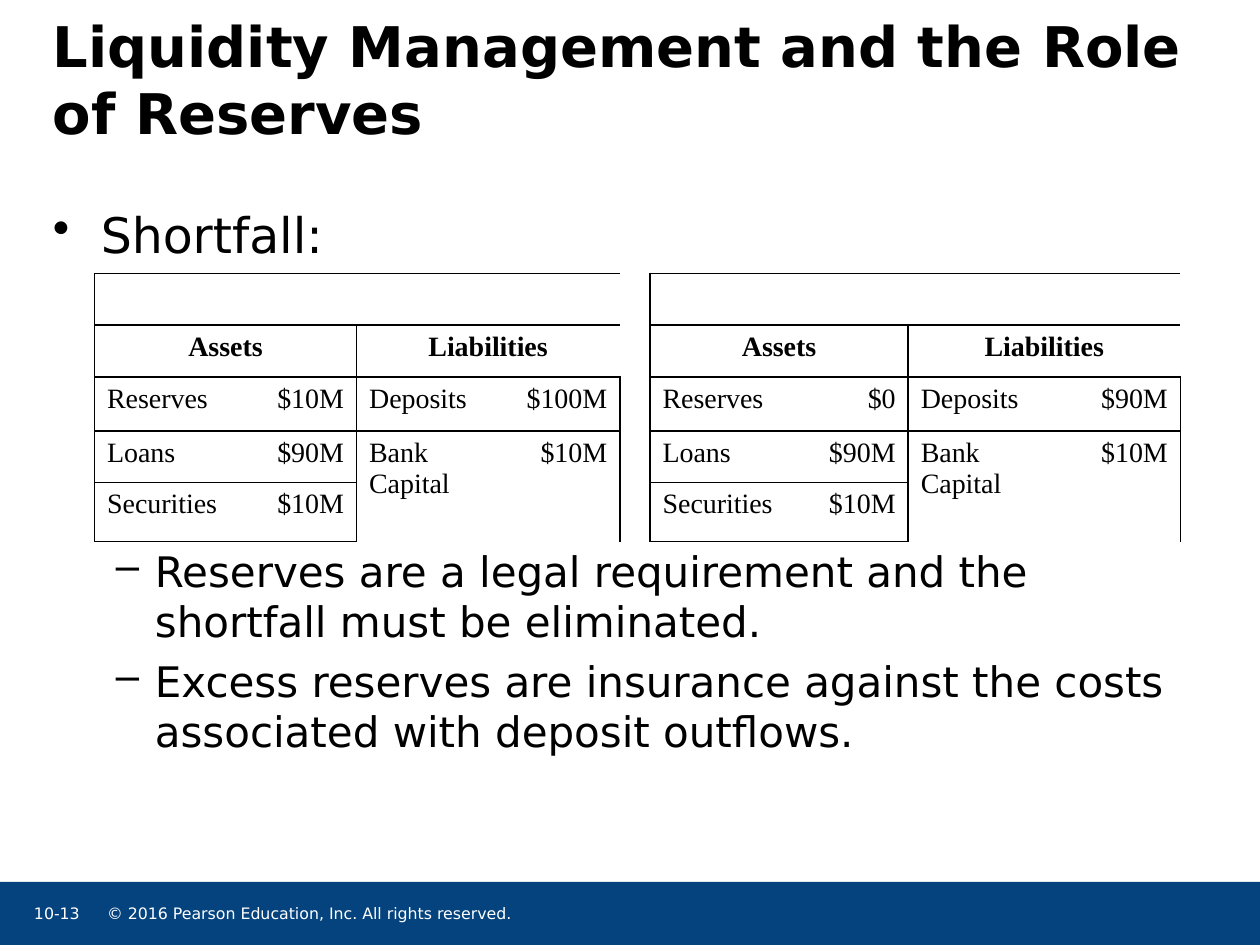
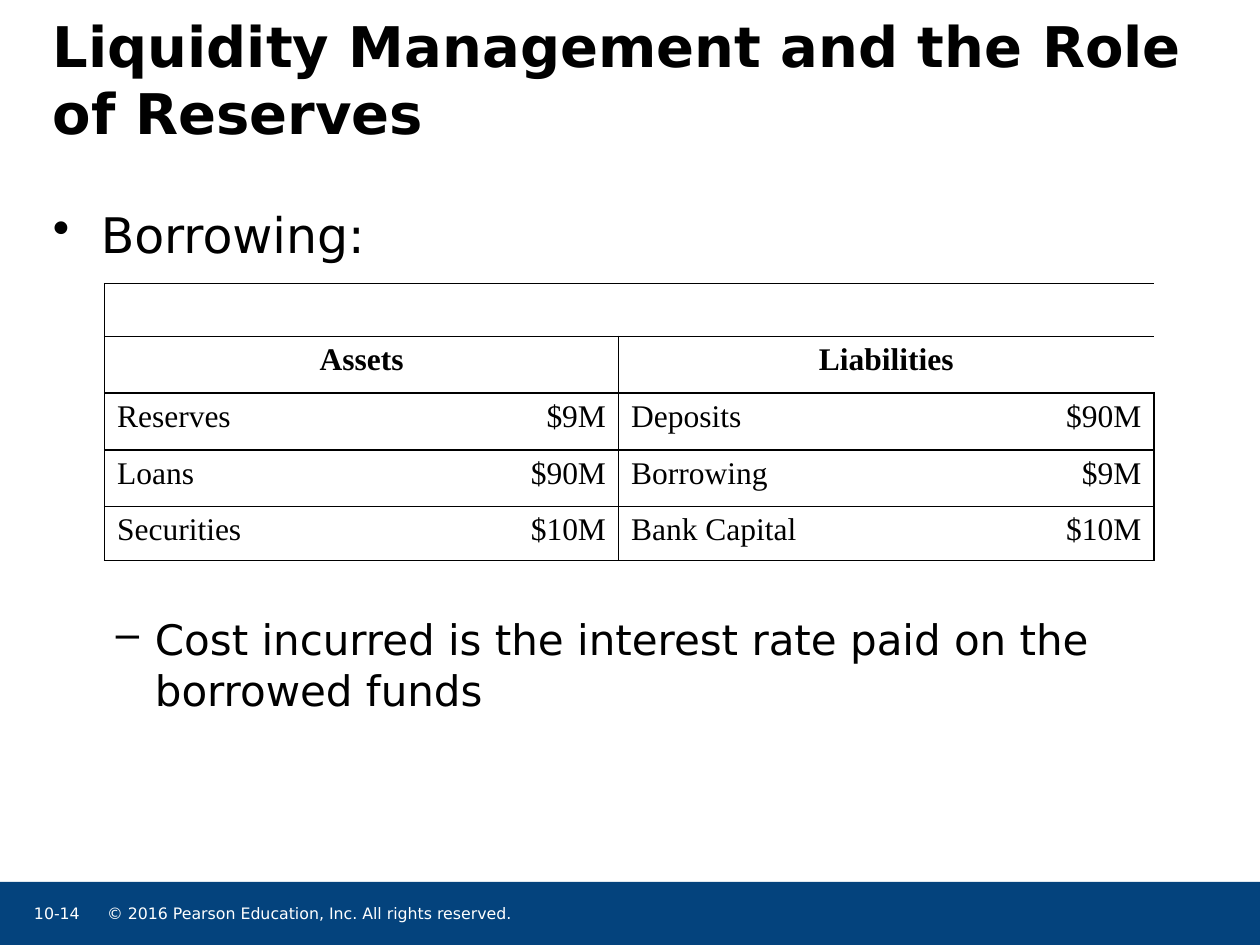
from lxml.etree import SubElement
from pptx import Presentation
from pptx.dml.color import RGBColor
from pptx.enum.shapes import MSO_SHAPE as Shape
from pptx.enum.text import MSO_ANCHOR as Anchor, PP_ALIGN as Align
from pptx.oxml.ns import qn
from pptx.util import Inches, Pt

COLORS = {"ink": "000000", "paper": "FFFFFF", "band": "04437D"}
SANS, SERIF = "DejaVu Sans", "Times New Roman"
TITLE = "Liquidity Management and the Role of Reserves"
COPYRIGHT = "© 2016 Pearson Education, Inc. All rights reserved."
BODY_LEFT, BODY_WIDTH = 0.42, 9.17
LEAD_BULLET = {"mark": "•", "margin": 0.38, "hang": 0.38}
NOTE_BULLET = {"mark": "–", "margin": 0.81, "hang": 0.31}


def color(name):
    """Return a named colour of the palette."""
    return RGBColor.from_string(COLORS[name])


def write(paragraph, text, size=24, font=SANS, ink="ink", bold=False,
          align=Align.LEFT, before=0, bullet=None):
    """Fill a paragraph with formatted text."""
    if bullet:
        properties = paragraph._p.get_or_add_pPr()
        properties.set("marL", str(Inches(bullet["margin"])))
        properties.set("indent", str(-Inches(bullet["hang"])))
        SubElement(properties, qn("a:buChar")).set("char", bullet["mark"])
    paragraph.alignment = align
    paragraph.space_before = Pt(before)
    run = paragraph.add_run()
    run.text = text
    run.font.name, run.font.size, run.font.bold = font, Pt(size), bold
    run.font.color.rgb = color(ink)


def add_text(slide, at, texts, anchor=Anchor.TOP, before=0, **style):
    """Add a text box with one paragraph for each text."""
    frame = slide.shapes.add_textbox(*map(Inches, at)).text_frame
    frame.word_wrap = True
    frame.vertical_anchor = anchor
    frame.margin_left = frame.margin_top = frame.margin_right = frame.margin_bottom = 0
    for index, text in enumerate(texts):
        paragraph = frame.add_paragraph() if index else frame.paragraphs[0]
        write(paragraph, text, before=before if index else 0, **style)


def rule_cell(cell, **widths):
    """Draw the given sides L, R, T, B of a cell and clear the others."""
    properties = cell._tc.get_or_add_tcPr()
    for side in "LRTB":
        line = SubElement(properties, qn(f"a:ln{side}"))
        line.set("w", str(Pt(widths.get(side, 0))))
        if side in widths:
            fill = SubElement(line, qn("a:solidFill"))
            SubElement(fill, qn("a:srgbClr")).set("val", COLORS["ink"])
        else:
            SubElement(line, qn("a:noFill"))
    cell.fill.background()


def fill_account(table, first, heading, entries, size):
    """Fill a label and an amount column; an entry of None extends the one above."""
    label_column, amount_column = first, first + 1
    for column, side in ((label_column, "L"), (amount_column, "R")):
        rule_cell(table.cell(1, column), **{side: 1, "T": 1, "B": 1.5})
    header = table.cell(1, label_column)
    header.merge(table.cell(1, amount_column))
    write(header.text_frame.paragraphs[0], heading, size=size, font=SERIF,
          bold=True, align=Align.CENTER)
    for row, entry in enumerate(entries, start=2):
        extended = row - 1 < len(entries) + 1 and entries[row - 1:row] == [None]
        for index, side in enumerate("LR"):
            cell = table.cell(row, first + index)
            edges = {side: 1}
            if entry:
                edges["T"] = 1.5 if row == 2 else 1
            if not extended:
                edges["B"] = 1
            rule_cell(cell, **edges)
            if entry:
                write(cell.text_frame.paragraphs[0], entry[index], size=size,
                      font=SERIF, align=Align.RIGHT if index else Align.LEFT)
            else:
                table.cell(row - 1, first + index).merge(cell)


def add_balance_sheets(slide, left, top, columns, rows, sheets, size):
    """Add a table of balance sheets, set apart by a gap column."""
    table = slide.shapes.add_table(
        len(rows), len(columns), Inches(left), Inches(top),
        Inches(sum(columns)), Inches(sum(rows))).table
    table.first_row = table.horz_banding = False
    for column, width in zip(table.columns, columns):
        column.width = Inches(width)
    for row, height in zip(table.rows, rows):
        row.height = Inches(height)
    for number, (assets, liabilities) in enumerate(sheets):
        first = number * 5
        if number:
            for row in range(len(rows)):
                rule_cell(table.cell(row, first - 1))
        for offset, sides in enumerate(({"L": 1}, {}, {}, {"R": 1})):
            rule_cell(table.cell(0, first + offset), T=1, B=1, **sides)
        table.cell(0, first).merge(table.cell(0, first + 3))
        fill_account(table, first, "Assets", assets, size)
        fill_account(table, first + 2, "Liabilities", liabilities, size)


def add_frame(deck, number):
    """Add a slide with the shared title and footer band."""
    slide = deck.slides.add_slide(deck.slide_layouts[6])
    band = slide.shapes.add_shape(
        Shape.RECTANGLE, 0, Inches(7), Inches(10), Inches(0.5))
    band.shadow.inherit = False
    band.fill.solid()
    band.fill.fore_color.rgb = color("band")
    band.line.fill.background()
    add_text(slide, (0.85, 7.17, 5.9, 0.2), [COPYRIGHT], size=9, ink="paper")
    add_text(slide, (0.27, 7.17, 0.5, 0.2), [number], size=9, ink="paper")
    add_text(slide, (BODY_LEFT, 0, BODY_WIDTH, 1.25), [TITLE], size=32,
             bold=True, anchor=Anchor.MIDDLE)
    return slide


def add_points(slide, lead, notes, notes_top):
    """Add the lead bullet above the table and the notes below it."""
    add_text(slide, (BODY_LEFT, 1.62, BODY_WIDTH, 0.5), [lead], size=28,
             bullet=LEAD_BULLET)
    add_text(slide, (BODY_LEFT, notes_top, BODY_WIDTH - 0.1, 0.85 * len(notes)),
             notes, before=5, bullet=NOTE_BULLET)


def main():
    """Build and save the deck."""
    deck = Presentation()
    deck.slide_width, deck.slide_height = Inches(10), Inches(7.5)
    loans, securities = ("Loans", "$90M"), ("Securities", "$10M")
    capital = ("Bank Capital", "$10M")

    shortfall = add_frame(deck, "10-13")
    add_points(shortfall, "Shortfall:", [
        "Reserves are a legal requirement and the shortfall must be eliminated.",
        "Excess reserves are insurance against the costs associated with deposit outflows.",
    ], 4.33)
    before_outflow = ([("Reserves", "$10M"), loans, securities],
                      [("Deposits", "$100M"), capital, None])
    after_outflow = ([("Reserves", "$0"), loans, securities],
                     [("Deposits", "$90M"), capital, None])
    add_balance_sheets(
        shortfall, 0.75, 2.17,
        [1.25, 0.83, 1.17, 0.92, 0.23, 1.22, 0.83, 1.33, 0.83],
        [0.41, 0.41, 0.43, 0.41, 0.47], [before_outflow, after_outflow], 16)

    borrowing = add_frame(deck, "10-14")
    add_points(borrowing, "Borrowing:", [
        "Cost incurred is the interest rate paid on the borrowed funds"], 4.87)
    after_borrowing = ([("Reserves", "$9M"), loans, securities],
                       [("Deposits", "$90M"), ("Borrowing", "$9M"), capital])
    add_balance_sheets(
        borrowing, 0.83, 2.25, [1.99, 2.09, 2.32, 1.93],
        [0.42, 0.45, 0.45, 0.45, 0.43], [after_borrowing], 18)

    deck.save("out.pptx")


if __name__ == "__main__":
    main()
